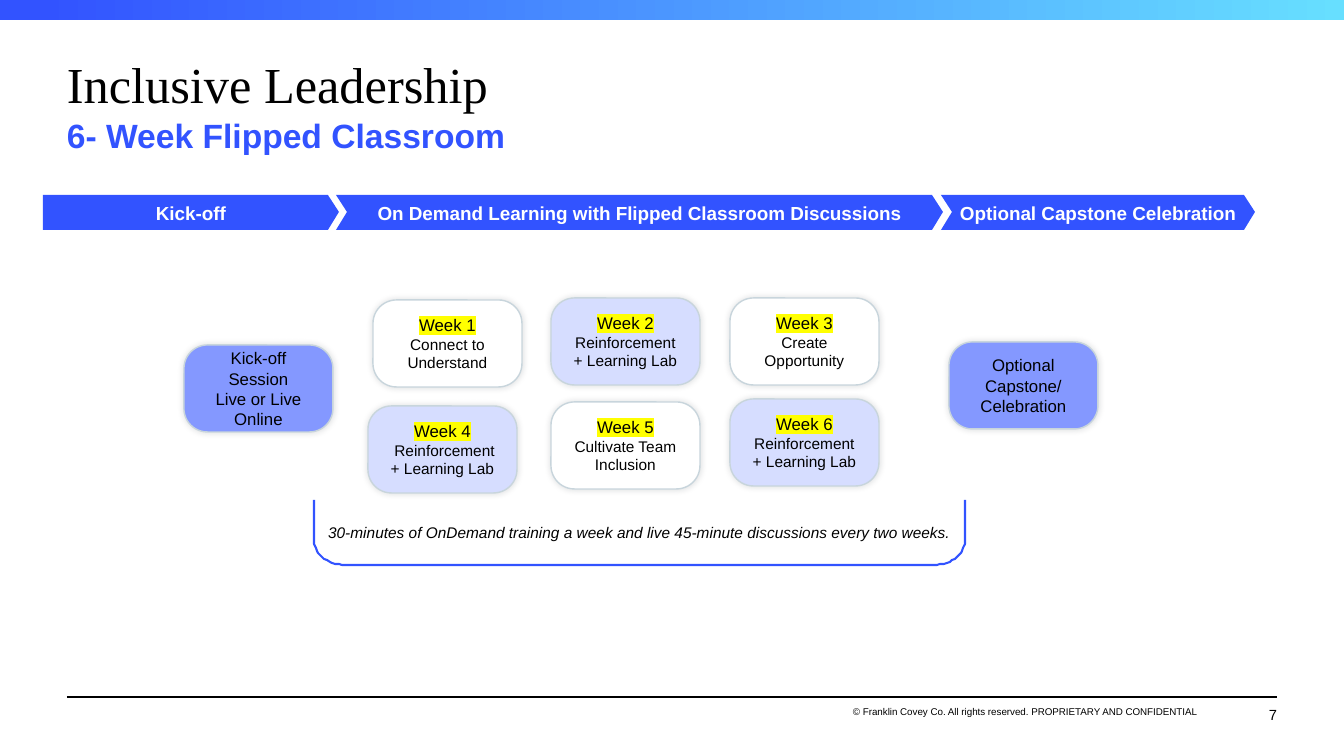
import math
from dataclasses import dataclass

from lxml import etree
from pptx import Presentation
from pptx import util as u
from pptx.dml.color import RGBColor
from pptx.enum import shapes, text
from pptx.oxml.ns import qn

PX = 9071  # EMU per px
ALIGN = text.PP_ALIGN
ANCHOR = text.MSO_ANCHOR


@dataclass(frozen=True)
class Theme:
    blue: str = "3253FF"
    cyan: str = "67DFFF"
    periwinkle: str = "8498FF"
    lavender: str = "D6DDFF"
    white: str = "FFFFFF"
    black: str = "000000"
    outline: str = "C8D5DC"
    shade: str = "101820"
    marker: str = "FFFF00"
    sans: str = "Arial"
    serif: str = "Times New Roman"
    title: float = 36
    subtitle: float = 24
    phase: float = 13.5
    label: float = 12
    body: float = 11
    number: float = 10.5
    footer: float = 7


THEME = Theme()


@dataclass(frozen=True)
class Line:
    words: str
    size: float
    color: str = THEME.black
    font: str = THEME.sans
    bold: bool = False
    italic: bool = False
    highlight: bool = False
    spacing: float = 1.0


@dataclass(frozen=True)
class Card:
    left: int
    top: int
    fill: str
    lines: tuple[Line, ...]


@dataclass(frozen=True)
class Phase:
    left: int
    right: int
    title: str
    notched: bool = True


def px(*lengths: int) -> list[int]:
    return [length * PX for length in lengths]


def rgb(color: str) -> RGBColor:
    return RGBColor.from_string(color)


def write(shape, lines: tuple[Line, ...], align=ALIGN.CENTER, anchor=ANCHOR.MIDDLE, inset: int = 0) -> None:
    frame = shape.text_frame
    margins = {f"margin_{side}": inset * PX for side in ("left", "top", "right", "bottom")}
    for name, value in {"word_wrap": True, "vertical_anchor": anchor, **margins}.items():
        setattr(frame, name, value)
    for index, line in enumerate(lines):
        para = frame.add_paragraph() if index else frame.paragraphs[0]
        para.alignment = align
        para.line_spacing = line.spacing
        span = para.add_run()
        span.text = line.words
        values = {"size": u.Pt(line.size), "name": line.font, "bold": line.bold, "italic": line.italic}
        for name, value in values.items():
            setattr(span.font, name, value)
        span.font.color.rgb = rgb(line.color)
        if line.highlight:
            mark = etree.Element(qn("a:highlight"))
            etree.SubElement(mark, qn("a:srgbClr"), val=THEME.marker)
            span.font._element.find(qn("a:solidFill")).addnext(mark)


def paint(shape, fill: str, line: str | None = None, width: float = 1) -> None:
    shape.shadow.inherit = False
    shape.fill.solid()
    shape.fill.fore_color.rgb = rgb(fill)
    if line is None:
        shape.line.fill.background()
    else:
        shape.line.color.rgb = rgb(line)
        shape.line.width = u.Pt(width)


def add_text(page, box: tuple[int, int, int, int], *lines: Line, **layout) -> None:
    write(page.shapes.add_textbox(*px(*box)), lines, **layout)


def add_outline(page, points: list[tuple[float, float]], close: bool):
    builder = page.shapes.build_freeform(*points[0], scale=PX)
    builder.add_line_segments(points[1:], close=close)
    return builder.convert_to_shape()


def add_phase(page, phase: Phase) -> None:
    top, middle, bottom, tip = 195, 212, 230, 11
    points = [(phase.left, top), (phase.right - tip, top), (phase.right, middle),
              (phase.right - tip, bottom), (phase.left, bottom)]
    if phase.notched:
        points.append((phase.left + tip, middle))
    arrow = add_outline(page, points, close=True)
    paint(arrow, THEME.blue)
    write(arrow, (Line(phase.title, THEME.phase, THEME.white, bold=True),))


def add_card(page, card: Card) -> None:
    box = page.shapes.add_shape(shapes.MSO_SHAPE.ROUNDED_RECTANGLE, *px(card.left, card.top, 149, 87))
    box.adjustments[0] = 0.27
    paint(box, card.fill, THEME.outline)
    effects = box._element.spPr.find(qn("a:effectLst"))
    glow = etree.SubElement(effects, qn("a:outerShdw"), blurRad=str(u.Pt(5)), dist="0", dir="0",
                            algn="ctr", rotWithShape="0")
    color = etree.SubElement(glow, qn("a:srgbClr"), val=THEME.shade)
    etree.SubElement(color, qn("a:alpha"), val="15000")
    write(box, card.lines, inset=13)


def add_bracket(page, left: int, top: int, right: int, bottom: int, note: Line) -> None:
    wide, high = 31, 24
    points: list[tuple[float, float]] = [(right, top)]
    for center, start in ((right - wide, 0), (left + wide, 90)):
        for step in range(0, 91, 6):
            angle = math.radians(start + step)
            points.append((center + wide * math.cos(angle), bottom - high + high * math.sin(angle)))
    points.append((left, top))
    bracket = add_outline(page, points, close=False)
    paint(bracket, THEME.white, THEME.blue, 1.5)
    write(bracket, (note,))


def week(number: int, left: int, top: int, words: str) -> Card:
    fill = THEME.white if number % 2 else THEME.lavender
    label = Line(f"Week {number}", THEME.label, highlight=True)
    return Card(left, top, fill, (label, Line(words, THEME.body)))


def session(left: int, top: int, *words: str) -> Card:
    return Card(left, top, THEME.periwinkle, tuple(Line(part, THEME.label) for part in words))


LAB = "Reinforcement + Learning Lab"
CARDS = (
    week(1, 373, 300, "Connect to Understand"),
    week(2, 551, 298, LAB),
    week(3, 730, 298, "Create Opportunity"),
    week(4, 368, 406, " " + LAB),
    week(5, 551, 402, "Cultivate Team Inclusion"),
    week(6, 730, 399, LAB),
    session(184, 345, "Kick-off Session", "Live or Live Online"),
    session(949, 342, "Optional", "Capstone/ Celebration"),
)
PHASES = (
    Phase(43, 339, "Kick-off", notched=False),
    Phase(336, 943, "On Demand Learning with Flipped Classroom Discussions"),
    Phase(941, 1255, "Optional Capstone Celebration"),
)


def main() -> None:
    deck = Presentation()
    deck.slide_width, deck.slide_height = px(1344, 756)
    page = deck.slides.add_slide(deck.slide_layouts[6])

    # Top band
    band = page.shapes.add_shape(shapes.MSO_SHAPE.RECTANGLE, *px(0, 0, 1344, 20))
    paint(band, THEME.blue)
    band.fill.gradient()
    band.fill.gradient_angle = 0
    for stop, color, place in zip(band.fill.gradient_stops, (THEME.blue, THEME.cyan), (0.03, 1)):
        stop.color.rgb = rgb(color)
        stop.position = place

    # Title
    add_text(page, (67, 60, 1126, 106),
             Line("Inclusive Leadership", THEME.title, font=THEME.serif, spacing=0.9),
             Line("6- Week Flipped Classroom", THEME.subtitle, THEME.blue, bold=True),
             align=ALIGN.LEFT, anchor=ANCHOR.TOP)

    # Programme phases, sessions and weeks
    for phase in PHASES:
        add_phase(page, phase)
    for card in CARDS:
        add_card(page, card)
    add_bracket(page, 314, 500, 965, 565, Line(
        "30-minutes of OnDemand training a week and live 45-minute discussions every two weeks.",
        THEME.body, italic=True))

    # Footer
    rule = page.shapes.add_connector(shapes.MSO_CONNECTOR.STRAIGHT, *px(67, 697, 1277, 697))
    rule.line.color.rgb = rgb(THEME.black)
    rule.line.width = u.Pt(1.25)
    etree.SubElement(rule._element.spPr, qn("a:effectLst"))
    add_text(page, (756, 701, 441, 22),
             Line("© Franklin Covey Co. All rights reserved. PROPRIETARY AND CONFIDENTIAL", THEME.footer),
             align=ALIGN.RIGHT)
    add_text(page, (1227, 706, 50, 40), Line("7", THEME.number), align=ALIGN.RIGHT, anchor=ANCHOR.TOP)

    deck.save("out.pptx")


if __name__ == "__main__":
    main()
